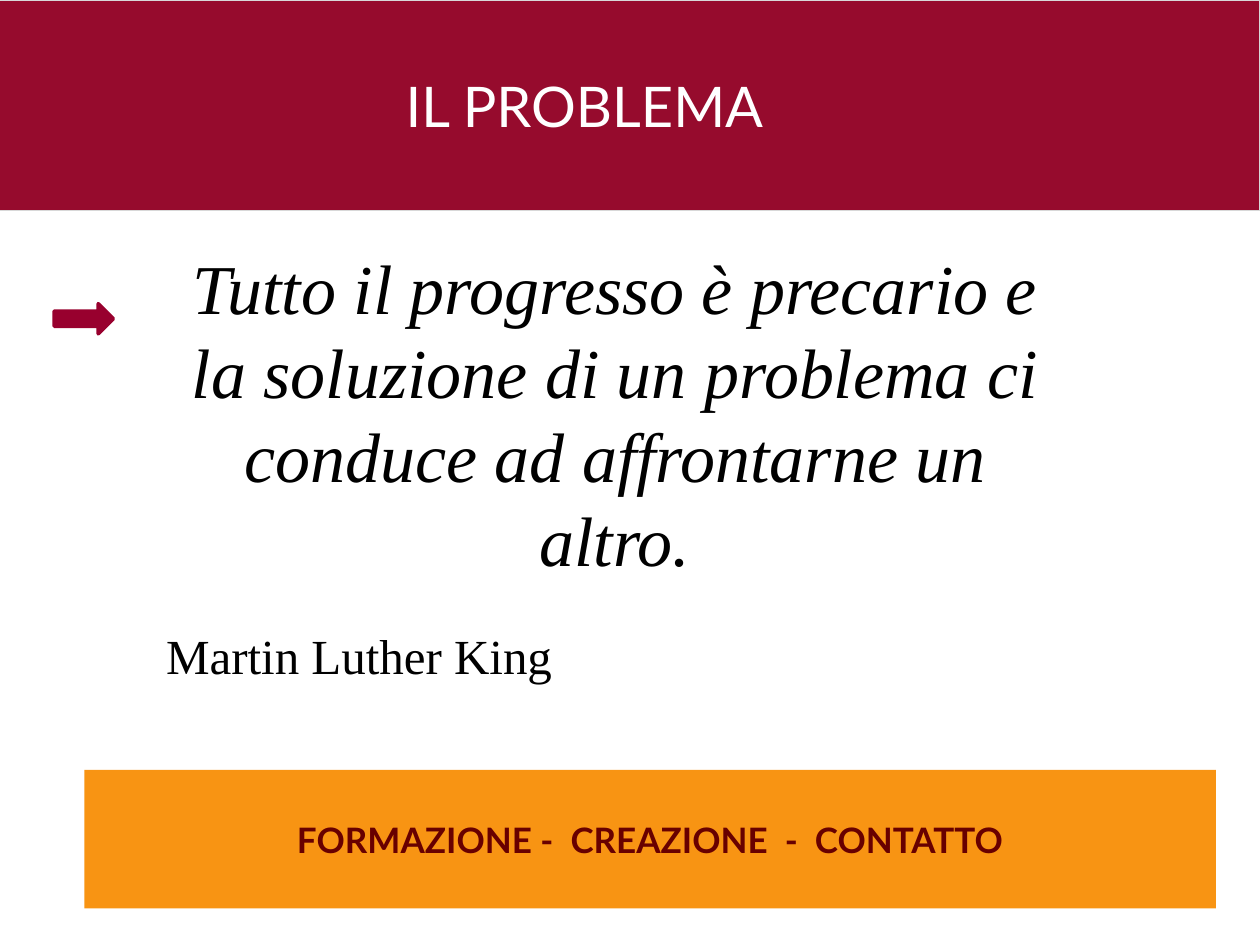
from dataclasses import dataclass

from pptx import Presentation
from pptx.dml.color import RGBColor as Rgb
from pptx.enum.shapes import MSO_SHAPE as Kind
from pptx.enum.text import MSO_ANCHOR as Anchor, PP_ALIGN as Align
from pptx.util import Inches, Pt


@dataclass(frozen=True)
class Theme:
    wine: str = "960B2D"
    arrow: str = "98002E"
    orange: str = "F89413"
    maroon: str = "680000"
    grey: str = "D8D8D8"
    white: str = "FFFFFF"
    black: str = "000000"
    sans: str = "Lato"
    serif: str = "Times New Roman"
    quote: int = 40
    title: int = 32
    name: int = 28
    foot: int = 20


class Deck:
    """Places elements on a grid of 10 columns and 7.5 rows."""
    cols, rows = 10, 7.5
    cell = Inches(1)

    def __init__(self, theme):
        self.theme = theme
        self.prs = Presentation()
        self.prs.slide_width = int(self.cols * self.cell)
        self.prs.slide_height = int(self.rows * self.cell)
        self.slide = self.prs.slides.add_slide(self.prs.slide_layouts[6])

    def grid(self, *cells):
        return [int(n * self.cell) for n in cells]

    def shape(self, kind, box, fill, line=None, width=0.75):
        item = self.slide.shapes.add_shape(kind, *self.grid(*box))
        item.shadow.inherit = False
        item.fill.solid()
        item.fill.fore_color.rgb = Rgb.from_string(fill)
        if line:
            item.line.color.rgb = Rgb.from_string(line)
            item.line.width = Pt(width)
        else:
            item.line.fill.background()
        return item

    def text(self, box, lines):
        item = self.slide.shapes.add_textbox(*self.grid(*box))
        frame = item.text_frame
        frame.word_wrap = True
        frame.text = "\n".join(lines)
        return frame

    def style(self, para, font, size, color, align=Align.CENTER,
              bold=False, italic=False):
        para.alignment = align
        for run in para.runs:
            face = run.font
            face.name, face.size = font, Pt(size)
            face.bold, face.italic = bold, italic
            face.color.rgb = Rgb.from_string(color)


def main():
    look = Theme()
    deck = Deck(look)

    # Title band
    deck.shape(Kind.RECTANGLE, (-0.05, 0, 10.05, 1.67), look.wine, look.grey)
    title = deck.text((0.35, 0.52, 8.58, 0.64), ["IL PROBLEMA"])
    deck.style(title.paragraphs[0], look.sans, look.title, look.white)

    # Footer bar
    bar = deck.shape(Kind.RECTANGLE, (0.67, 6.11, 8.98, 1.1), look.orange)
    foot = bar.text_frame
    foot.text = "FORMAZIONE -  CREAZIONE  -  CONTATTO"
    foot.vertical_anchor = Anchor.MIDDLE
    deck.style(foot.paragraphs[0], look.sans, look.foot, look.maroon, bold=True)

    # Arrow marker
    deck.shape(Kind.RIGHT_ARROW, (0.43, 2.41, 0.47, 0.24),
               look.arrow, look.arrow, 2)

    # Quote and its author
    body = deck.text((1.22, 1.86, 7.32, 3.6), [
        "Tutto il progresso è precario e la soluzione di un problema ci "
        "conduce ad affrontarne un altro.",
        "Martin Luther King"])
    body.margin_top = Inches(0.08)
    quote, author = body.paragraphs
    deck.style(quote, look.serif, look.quote, look.black, italic=True)
    quote.line_spacing = Pt(1.2 * look.quote)
    deck.style(author, look.serif, look.name, look.black, Align.LEFT)
    author.space_before = Pt(26)

    deck.prs.save("out.pptx")


if __name__ == "__main__":
    main()
